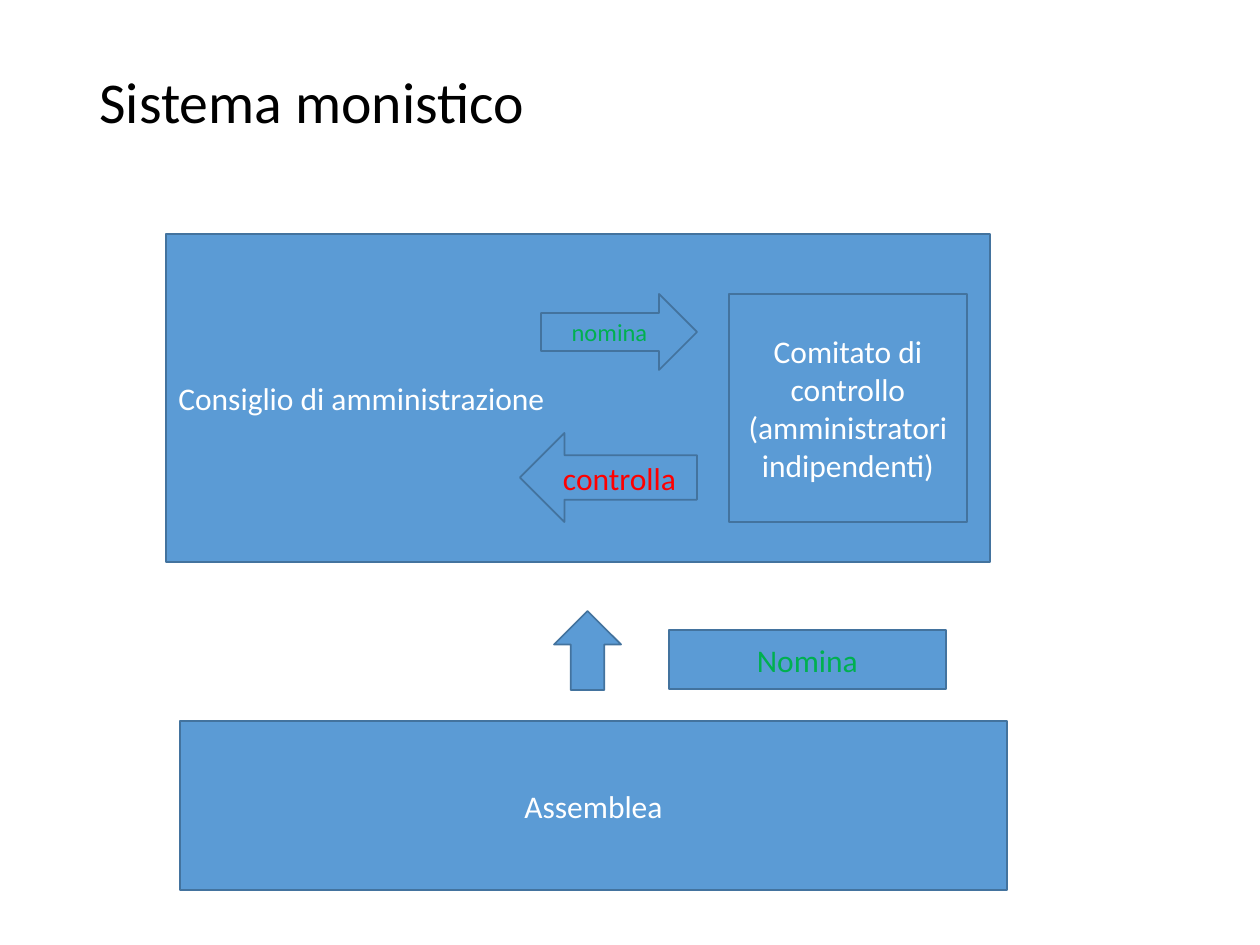
from pptx import Presentation
from pptx import util as u
from pptx.dml.color import RGBColor
from pptx.enum import shapes, text

PX = 914400 // 126
FONT = "Calibri"
BLUE, EDGE = "5B9BD5", "43739E"
WHITE, BLACK, GREEN, RED = "FFFFFF", "000000", "00B050", "FF0000"
KIND = shapes.MSO_SHAPE
ALIGN = text.PP_ALIGN


def color(value):
    return RGBColor.from_string(value)


def px(*values):
    return [u.Emu(v * PX) for v in values]


def set_all(obj, values):
    for name, value in values.items():
        setattr(obj, name, value)


def write(sp, words, size, ink, align, frame):
    tf = sp.text_frame
    set_all(tf, {"word_wrap": True, **frame})
    p = tf.paragraphs[0]
    p.alignment = align
    r = p.add_run()
    r.text = words
    set_all(r.font, {"name": FONT, "size": u.Pt(size)})
    r.font.color.rgb = color(ink)
    return p


def block(s, kind, box, words="", size=18, ink=WHITE, align=ALIGN.CENTER):
    sp = s.shapes.add_shape(kind, *px(*box))
    sp.shadow.inherit = False
    sp.fill.solid()
    sp.fill.fore_color.rgb = color(BLUE)
    sp.line.color.rgb = color(EDGE)
    sp.line.width = u.Pt(1)
    if words:
        write(sp, words, size, ink, align,
              {"vertical_anchor": text.MSO_ANCHOR.MIDDLE})
    return sp


def title(s, box):
    sp = s.shapes.add_textbox(*px(*box))
    p = write(sp, "Sistema monistico", 33, BLACK, ALIGN.LEFT,
              {"vertical_anchor": text.MSO_ANCHOR.TOP, "margin_top": u.Emu(24 * PX)})
    p.line_spacing = 0.9


def board(s, box):
    x, y, w, h = box
    block(s, KIND.RECTANGLE, box, "Consiglio di amministrazione", align=ALIGN.LEFT)
    block(s, KIND.RECTANGLE, (x + 563, y + 60, 238, 228),
          "Comitato di controllo (amministratori indipendenti)")
    block(s, KIND.RIGHT_ARROW, (x + 375, y + 60, 156, 76), "nomina", 14, GREEN)
    block(s, KIND.LEFT_ARROW, (x + 354, y + 199, 177, 89), "controlla", ink=RED)


def appointment(s, box):
    x, y, w, h = box
    block(s, KIND.UP_ARROW, (x, y, 67, h))
    block(s, KIND.RECTANGLE, (x + 115, y + 19, w - 115, 59), "Nomina", ink=GREEN)


def assembly(s, box):
    block(s, KIND.RECTANGLE, box, "Assemblea")


def main():
    prs = Presentation()
    set_all(prs, {"slide_width": u.Inches(10), "slide_height": u.Inches(7.5)})
    s = prs.slides.add_slide(prs.slide_layouts[6])
    title(s, (87, 50, 1086, 183))
    board(s, (166, 234, 824, 328))
    appointment(s, (554, 611, 392, 79))
    assembly(s, (180, 721, 827, 169))
    prs.save("out.pptx")


if __name__ == "__main__":
    main()
